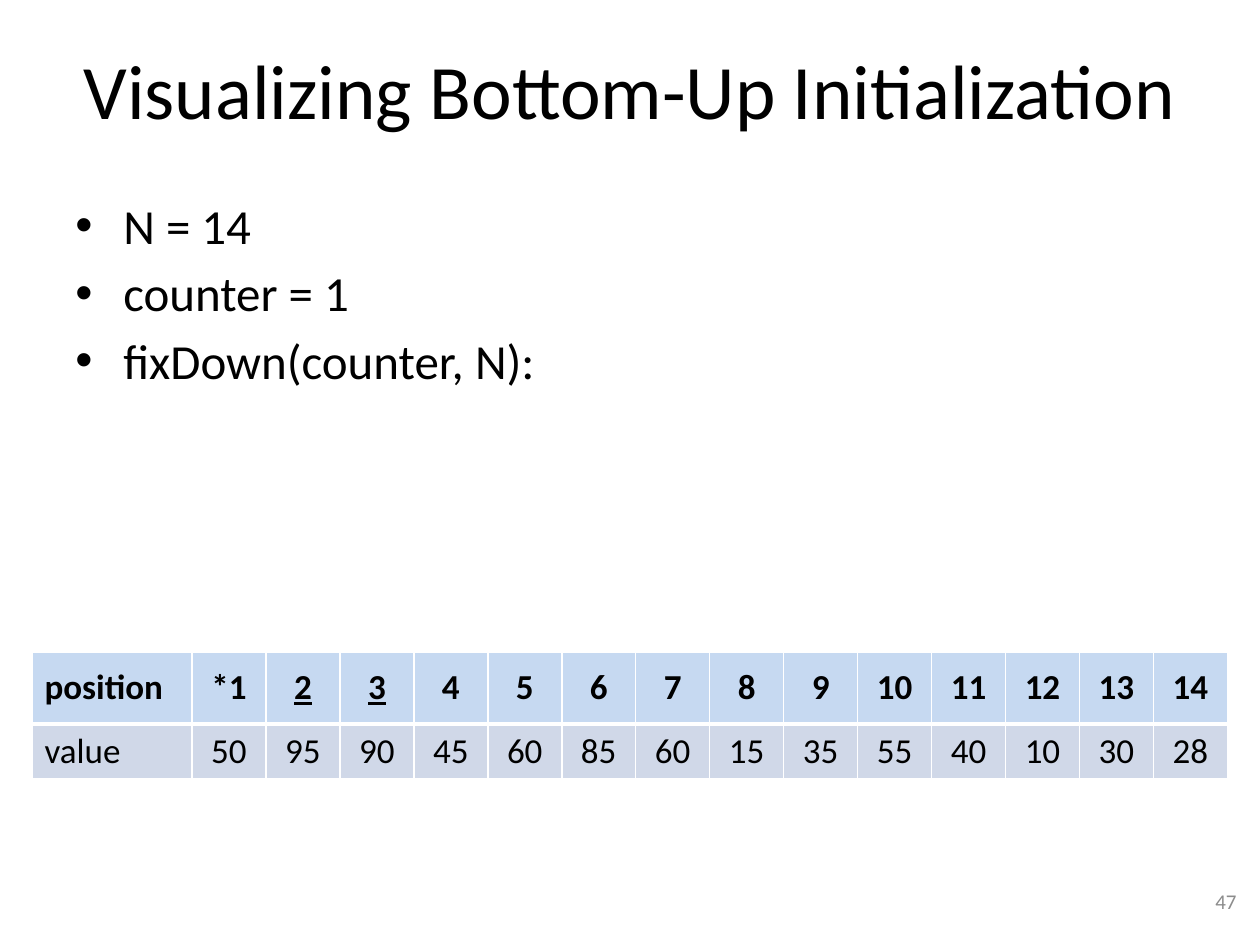
from lxml.etree import SubElement
from pptx import Presentation
from pptx.dml.color import RGBColor
from pptx.enum.text import MSO_ANCHOR, PP_ALIGN
from pptx.oxml.ns import qn
from pptx.util import Pt

PX = 914400 // 126
COLORS = {
    "text": "000000",
    "number": "8C8C8C",
    "header": "C6D9F1",
    "row": "D0D8E8",
    "border": "FFFFFF",
}


def style(paragraph, size, color="text", align=PP_ALIGN.LEFT, bold=False):
    paragraph.alignment = align
    font = paragraph.font
    font.name, font.size, font.bold = "Calibri", Pt(size), bold
    font.color.rgb = RGBColor.from_string(COLORS[color])


def set_borders(cell, bottom):
    properties = cell._tc.get_or_add_tcPr()
    widths = {"lnL": 1, "lnR": 1, "lnT": 1, "lnB": bottom}
    for index, (side, width) in enumerate(widths.items()):
        line = SubElement(properties, qn(f"a:{side}"), w=str(Pt(width)))
        fill = SubElement(line, qn("a:solidFill"))
        SubElement(fill, qn("a:srgbClr"), val=COLORS["border"])
        properties.insert(index, line)


presentation = Presentation()
presentation.slide_width = 1260 * PX
presentation.slide_height = 945 * PX
slide = presentation.slides.add_slide(presentation.slide_layouts[5])

# Title
title = slide.shapes.title
title.left, title.top, title.width, title.height = 63 * PX, 10 * PX, 1134 * PX, 158 * PX
title.text_frame.text = "Visualizing Bottom-Up Initialization"
title.text_frame.vertical_anchor = MSO_ANCHOR.MIDDLE
style(title.text_frame.paragraphs[0], 44, align=PP_ALIGN.CENTER)

# Bulleted steps
steps = slide.shapes.add_textbox(63 * PX, 189 * PX, 1134 * PX, 325 * PX)
steps.text_frame.word_wrap = True
steps.text_frame.text = "N = 14\ncounter = 1\nfixDown(counter, N):"
for paragraph in steps.text_frame.paragraphs:
    paragraph.space_before = Pt(5)
    properties = paragraph._p.get_or_add_pPr()
    properties.set("marL", str(48 * PX))
    properties.set("indent", str(-48 * PX))
    SubElement(properties, qn("a:buFont"), typeface="Arial")
    SubElement(properties, qn("a:buChar"), char="•")
    style(paragraph, 28)

# Heap array table
positions = ["position", "*1"] + [str(n) for n in range(2, 15)]
values = ["value", 50, 95, 90, 45, 60, 85, 60, 15, 35, 55, 40, 10, 30, 28]
underlined = ("2", "3")
table = slide.shapes.add_table(
    2, len(positions), 32 * PX, 652 * PX, 1196 * PX, 127 * PX
).table
for index, column in enumerate(table.columns):
    column.width = (74 if index else 160) * PX
rows = [(positions, 72, "header", 3), (values, 55, "row", 1)]
for row_index, (texts, height, fill, bottom) in enumerate(rows):
    table.rows[row_index].height = height * PX
    for column_index, text in enumerate(texts):
        cell = table.cell(row_index, column_index)
        cell.text = str(text)
        cell.vertical_anchor = MSO_ANCHOR.MIDDLE
        cell.fill.solid()
        cell.fill.fore_color.rgb = RGBColor.from_string(COLORS[fill])
        set_borders(cell, bottom)
        paragraph = cell.text_frame.paragraphs[0]
        align = PP_ALIGN.CENTER if column_index else PP_ALIGN.LEFT
        style(paragraph, 20, align=align, bold=fill == "header")
        if text in underlined:
            paragraph.font.underline = True

# Slide number
number = slide.shapes.add_textbox(955 * PX, 876 * PX, 294 * PX, 50 * PX)
number.text_frame.word_wrap = True
number.text_frame.vertical_anchor = MSO_ANCHOR.MIDDLE
number.text_frame.text = "47"
style(number.text_frame.paragraphs[0], 12, "number", PP_ALIGN.RIGHT)

presentation.save("out.pptx")
